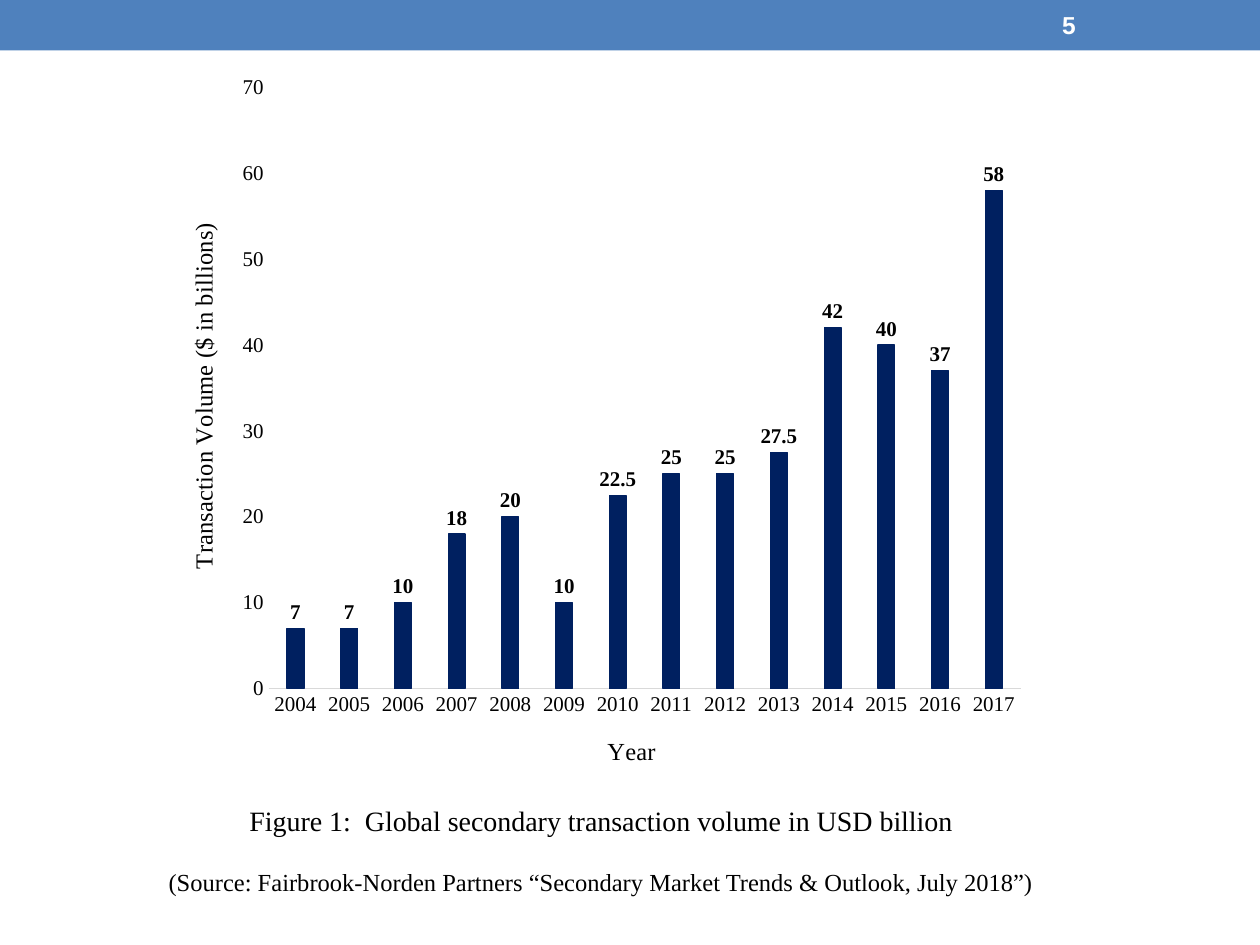
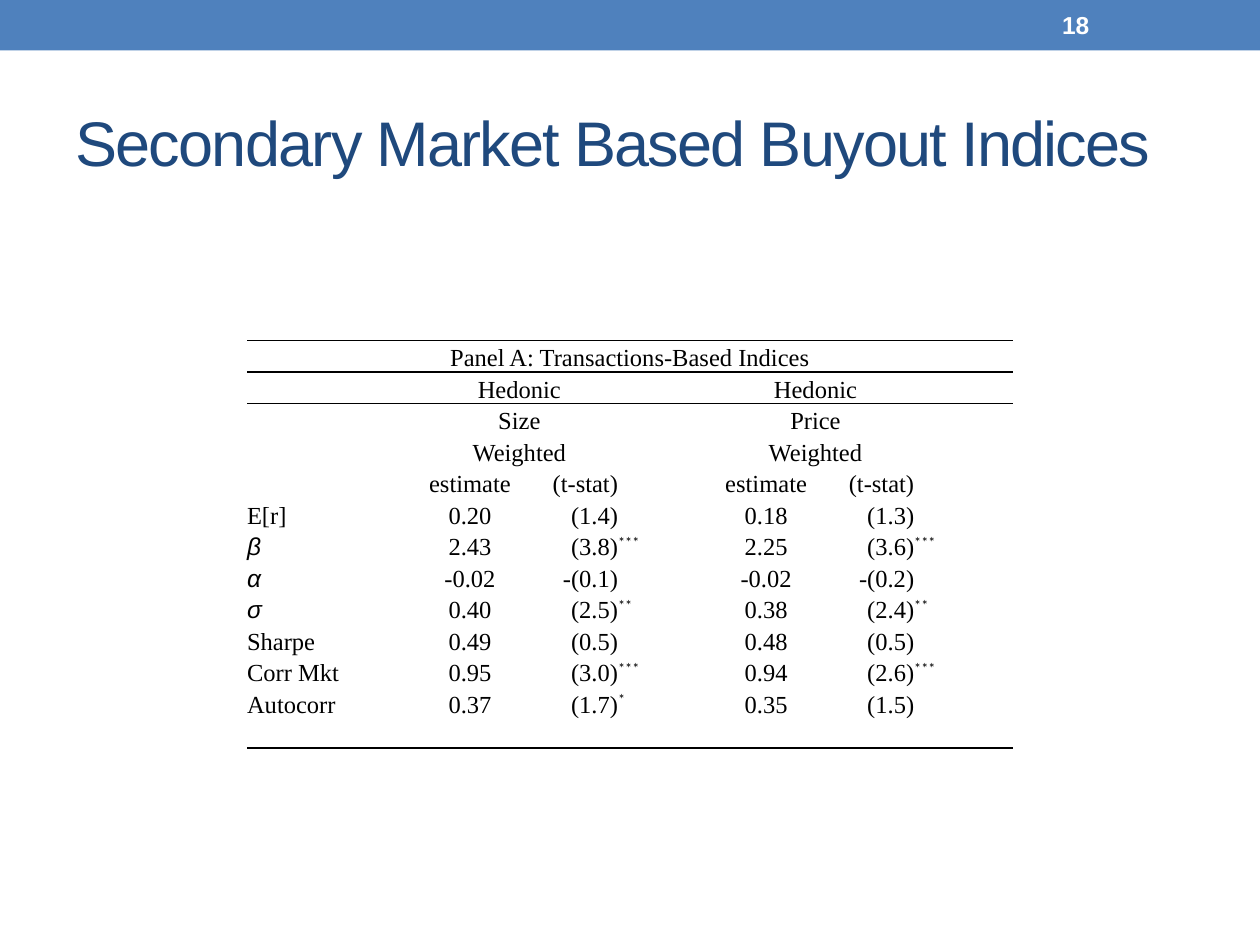
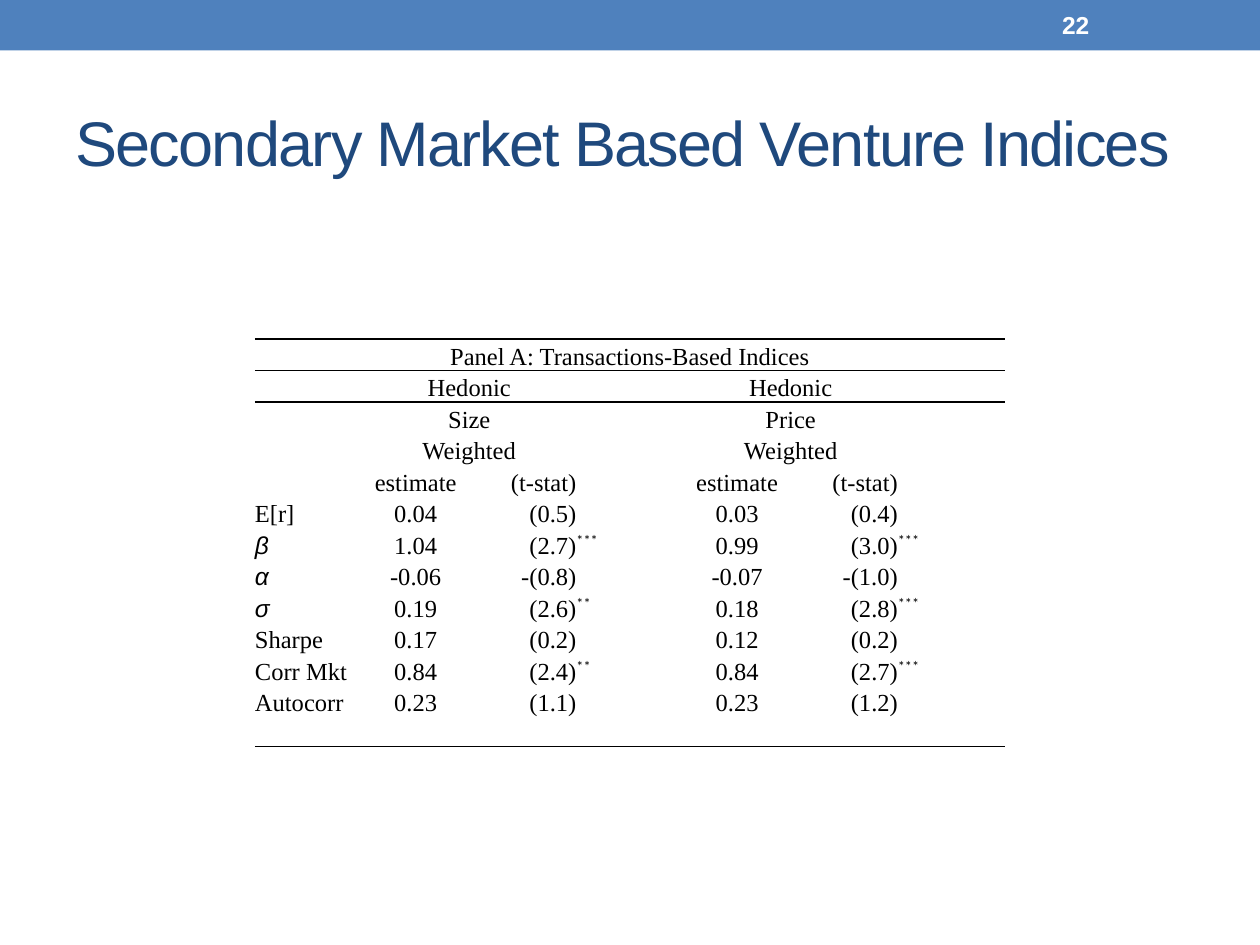
from dataclasses import dataclass

from lxml.etree import SubElement, fromstring
from pptx import Presentation
from pptx.chart.data import CategoryChartData
from pptx.dml.color import RGBColor
from pptx.enum.chart import XL_CHART_TYPE, XL_LABEL_POSITION, XL_TICK_MARK
from pptx.enum.shapes import MSO_SHAPE
from pptx.enum.text import MSO_ANCHOR, PP_ALIGN
from pptx.oxml import parse_xml
from pptx.oxml.ns import nsdecls, qn
from pptx.util import Cm, Pt


@dataclass(frozen=True)
class Theme:
    band: str = "4F81BD"
    title: str = "1F497D"
    bar: str = "002060"
    axis: str = "D9D9D9"
    ink: str = "000000"
    paper: str = "FFFFFF"
    sans: str = "Arial"
    serif: str = "Times New Roman"
    star: str = "Calibri"
    title_size: int = 36
    caption_size: int = 16
    body_size: int = 14
    label_size: int = 12


theme = Theme()


def write_text(para, text, *, font=theme.serif, size=theme.body_size, color=theme.ink,
               bold=False, italic=False, align=PP_ALIGN.LEFT, line_spacing=None,
               space_before=0, tracking=None, baseline=None):
    para.alignment = align
    para.space_before = Pt(space_before)
    if line_spacing:
        para.line_spacing = line_spacing
    if not text:
        SubElement(para._p, qn("a:endParaRPr"), sz=str(size * 100))
        return
    span = para.add_run()
    span.text = text
    span.font.name = font
    span.font.size = Pt(size)
    span.font.color.rgb = RGBColor.from_string(color)
    span.font.bold = bold
    span.font.italic = italic
    if tracking:
        span.font._element.set("spc", str(tracking * 100))
    if baseline:
        span.font._element.set("baseline", str(baseline * 1000))


def add_text_box(page, left, top, width, height, anchor=MSO_ANCHOR.MIDDLE):
    frame = page.shapes.add_textbox(Cm(left), Cm(top), Cm(width), Cm(height)).text_frame
    frame.word_wrap = True
    frame.vertical_anchor = anchor
    return frame


deck = Presentation()
deck.slide_width = Cm(25.4)
deck.slide_height = Cm(19.05)

pages = []
for number, title in [
    ("5", None),
    ("18", "Secondary Market Based Buyout Indices"),
    ("22", "Secondary Market Based Venture Indices"),
]:
    page = deck.slides.add_slide(deck.slide_layouts[6])
    pages.append(page)
    band = page.shapes.add_shape(MSO_SHAPE.RECTANGLE, 0, 0, deck.slide_width, Cm(1.02))
    band.shadow.inherit = False
    band.fill.solid()
    band.fill.fore_color.rgb = RGBColor.from_string(theme.band)
    band.line.fill.background()
    if title:
        frame = add_text_box(page, 1.27, 1.47, 22.86, 2.74)
        write_text(frame.paragraphs[0], title, font=theme.sans, size=theme.title_size,
                   color=theme.title, tracking=-1)
    frame = add_text_box(page, 21.16, 0.05, 2.97, 0.91)
    write_text(frame.paragraphs[0], number, font=theme.sans, color=theme.paper, bold=True)

chart_page, buyout_page, venture_page = pages

volumes = CategoryChartData(number_format="General")
volumes.categories = range(2004, 2018)
volumes.add_series("Series 1", [7, 7, 10, 18, 20, 10, 22.5, 25, 25, 27.5, 42, 40, 37, 58])
chart = chart_page.shapes.add_chart(
    XL_CHART_TYPE.COLUMN_CLUSTERED, Cm(3.3), Cm(1.32), Cm(17.63), Cm(14.78), volumes
).chart
chart.has_legend = False
chart.has_title = False
chart.font.name = theme.serif
chart.font.size = Pt(theme.label_size)
chart.font.color.rgb = RGBColor.from_string(theme.ink)
chart._chartSpace.chart.addnext(parse_xml(
    f'<c:spPr {nsdecls("c", "a")}><a:solidFill><a:srgbClr val="{theme.paper}"/></a:solidFill>'
    '<a:ln><a:noFill/></a:ln></c:spPr>'
))

plot_area = chart._chartSpace.chart.plotArea
for layout in plot_area.findall(qn("c:layout")):
    plot_area.remove(layout)
plot_area.insert(0, parse_xml(
    f'<c:layout {nsdecls("c")}><c:manualLayout><c:layoutTarget val="inner"/>'
    '<c:xMode val="edge"/><c:yMode val="edge"/>'
    '<c:x val="0.12"/><c:y val="0.03"/><c:w val="0.86"/><c:h val="0.82"/>'
    '</c:manualLayout></c:layout>'
))

plot = chart.plots[0]
plot.gap_width = 219
plot.overlap = -27
plot.vary_by_categories = False
bars = plot.series[0].format
bars.fill.solid()
bars.fill.fore_color.rgb = RGBColor.from_string(theme.bar)
bars.line.color.rgb = RGBColor.from_string(theme.bar)
bars.line.width = Pt(0.75)

plot.has_data_labels = True
labels = plot.data_labels
labels.show_value = True
labels.position = XL_LABEL_POSITION.OUTSIDE_END
labels.font.name = theme.serif
labels.font.size = Pt(theme.label_size)
labels.font.bold = True
labels.font.color.rgb = RGBColor.from_string(theme.ink)

for axis, axis_title, rotation in [
    (chart.category_axis, "Year", 0),
    (chart.value_axis, "Transaction Volume ($ in billions)", -90),
]:
    axis.has_major_gridlines = False
    axis.major_tick_mark = XL_TICK_MARK.NONE
    axis.minor_tick_mark = XL_TICK_MARK.NONE
    axis.tick_labels.font.size = Pt(theme.label_size)
    frame = axis.axis_title.text_frame
    frame._txBody.bodyPr.set("rot", str(rotation * 60000))
    frame._txBody.bodyPr.set("vert", "horz")
    write_text(frame.paragraphs[0], axis_title, align=PP_ALIGN.CENTER)
chart.category_axis.format.line.color.rgb = RGBColor.from_string(theme.axis)
chart.category_axis.format.line.width = Pt(0.75)
chart.value_axis.format.line.fill.background()
chart.value_axis.minimum_scale = 0
chart.value_axis.maximum_scale = 70
chart.value_axis.major_unit = 10

caption = add_text_box(chart_page, 1.4, 16.08, 21.44, 2.13, MSO_ANCHOR.TOP)
write_text(caption.paragraphs[0], "Figure 1:  Global secondary transaction volume in USD billion",
           size=theme.caption_size, align=PP_ALIGN.CENTER)
write_text(caption.add_paragraph(),
           "(Source: Fairbrook-Norden Partners “Secondary Market Trends & Outlook, July 2018”)",
           align=PP_ALIGN.CENTER, space_before=17)

header_rows = [
    ["Panel A: Transactions-Based Indices", "", "", "", "", "", ""],
    ["", "Hedonic", "", "", "Hedonic", "", ""],
    ["", "Size", "", "", "Price", "", ""],
    ["", "Weighted", "", "", "Weighted", "", ""],
    ["", "estimate", "(t-stat)", "", "estimate", "(t-stat)", ""],
]
closing_row = [""] * 7
buyout_rows = [
    ["E[r]", "0.20", "(1.4)", "", "0.18", "(1.3)", ""],
    ["β", "2.43", "(3.8)", "***", "2.25", "(3.6)", "***"],
    ["α", "-0.02", "-(0.1)", "", "-0.02", "-(0.2)", ""],
    ["σ", "0.40", "(2.5)", "**", "0.38", "(2.4)", "**"],
    ["Sharpe", "0.49", "(0.5)", "", "0.48", "(0.5)", ""],
    ["Corr Mkt", "0.95", "(3.0)", "***", "0.94", "(2.6)", "***"],
    ["Autocorr", "0.37", "(1.7)", "*", "0.35", "(1.5)", ""],
]
venture_rows = [
    ["E[r]", "0.04", "(0.5)", "", "0.03", "(0.4)", ""],
    ["β", "1.04", "(2.7)", "***", "0.99", "(3.0)", "***"],
    ["α", "-0.06", "-(0.8)", "", "-0.07", "-(1.0)", ""],
    ["σ", "0.19", "(2.6)", "**", "0.18", "(2.8)", "***"],
    ["Sharpe", "0.17", "(0.2)", "", "0.12", "(0.2)", ""],
    ["Corr Mkt", "0.84", "(2.4)", "**", "0.84", "(2.7)", "***"],
    ["Autocorr", "0.23", "(1.1)", "", "0.23", "(1.2)", ""],
]
column_alignments = [PP_ALIGN.LEFT] + [PP_ALIGN.CENTER, PP_ALIGN.RIGHT, PP_ALIGN.LEFT] * 2
row_borders = {0: ["a:lnT", "a:lnB"], 1: ["a:lnT"], 12: ["a:lnB"]}
row_height = 0.6

for page, left, top, label_width, value_width, data_rows in [
    (buyout_page, 4.98, 6.86, 3.5, 1.99, buyout_rows),
    (venture_page, 5.14, 6.83, 2.16, 2.16, venture_rows),
]:
    rows = header_rows + data_rows + [closing_row]
    widths = [label_width] + [value_width] * 6
    table = page.shapes.add_table(
        len(rows), len(widths), Cm(left), Cm(top), Cm(sum(widths)), Cm(row_height * len(rows))
    ).table
    table.first_row = False
    table.horz_banding = False
    table._tbl.tblPr.find(qn("a:tableStyleId")).text = "{2D5ABB26-0587-4C30-8999-92F81FD0307C}"
    for column, width in zip(table.columns, widths):
        column.width = Cm(width)

    for row_index, row in enumerate(rows):
        table.rows[row_index].height = Cm(row_height)
        for column_index, text in enumerate(row):
            cell = table.cell(row_index, column_index)
            cell.margin_left = cell.margin_right = cell.margin_top = cell.margin_bottom = 0
            cell.vertical_anchor = MSO_ANCHOR.BOTTOM
            for edge in row_borders.get(row_index, []):
                cell._tc.get_or_add_tcPr().append(fromstring(
                    f'<{edge} {nsdecls("a")} w="12700"><a:solidFill>'
                    f'<a:srgbClr val="{theme.ink}"/></a:solidFill></{edge}>'
                ))
            cell.fill.background()
            is_greek = text in ("β", "α", "σ")
            is_star = text.startswith("*")
            write_text(
                cell.text_frame.paragraphs[0], text,
                font=theme.sans if is_greek else theme.star if is_star else theme.serif,
                italic=is_greek,
                baseline=30 if is_star else None,
                align=PP_ALIGN.CENTER if row_index == 0 else column_alignments[column_index],
                line_spacing=1.07,
            )

    table.cell(0, 0).merge(table.cell(0, 6))
    for row_index in (1, 2, 3):
        for column_index in (1, 4):
            table.cell(row_index, column_index).merge(table.cell(row_index, column_index + 1))

deck.save("out.pptx")
